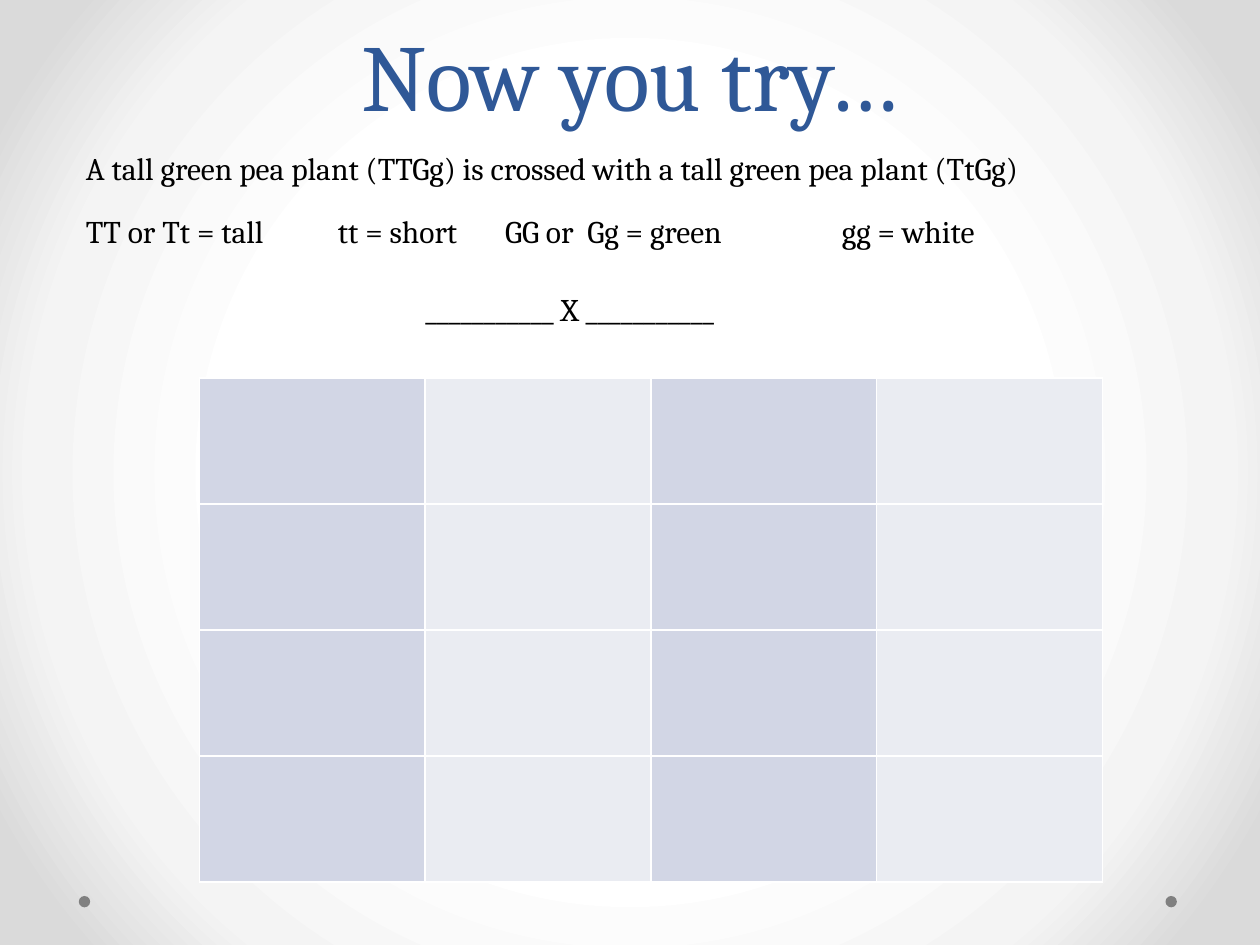
from lxml.etree import SubElement
from pptx import Presentation
from pptx.dml.color import RGBColor
from pptx.enum.shapes import MSO_SHAPE
from pptx.enum.text import MSO_ANCHOR, MSO_AUTO_SIZE, PP_ALIGN
from pptx.oxml import parse_xml
from pptx.oxml.ns import nsdecls, qn
from pptx.util import Pt

FONT = "Cambria"
BACKGROUND_STOPS = [(50, "FFFFFF"), (76, "F4F4F4"), (92, "DADADA")]
COLUMN_FILLS = ["D2D6E5", "EAECF2"]
GRID_SIZE = 4


def rgb(value):
    return RGBColor.from_string(value)


def box(left, top, width, height):
    return Pt(left), Pt(top), Pt(width), Pt(height)


def set_background(slide):
    """Fill the slide with a radial gradient centred on it."""
    stops = "".join(
        f'<a:gs pos="{pos * 1000}"><a:srgbClr val="{color}"/></a:gs>'
        for pos, color in BACKGROUND_STOPS
    )
    bg = parse_xml(
        f'<p:bg {nsdecls("p", "a")}><p:bgPr><a:gradFill rotWithShape="1">'
        f'<a:gsLst>{stops}</a:gsLst><a:path path="circle">'
        '<a:fillToRect l="50000" t="50000" r="50000" b="50000"/></a:path>'
        "</a:gradFill><a:effectLst/></p:bgPr></p:bg>"
    )
    slide.element.cSld.insert(0, bg)


def format_paragraph(p, size, color):
    p.font.name = FONT
    p.font.size = Pt(size)
    p.font.color.rgb = rgb(color)


def add_dot(slide, left):
    sp = slide.shapes.add_shape(MSO_SHAPE.OVAL, *box(left, 512, 6.5, 6.5))
    sp.shadow.inherit = False
    sp.fill.solid()
    sp.fill.fore_color.rgb = rgb("808080")
    sp.line.fill.background()


def set_title(slide, text):
    title = slide.shapes.title
    title.left, title.top, title.width, title.height = box(36, 0, 648, 78)
    tf = title.text_frame
    tf.text = text
    tf.auto_size = MSO_AUTO_SIZE.NONE
    tf.vertical_anchor = MSO_ANCHOR.BOTTOM
    p = tf.paragraphs[0]
    p.alignment = PP_ALIGN.CENTER
    p.line_spacing = Pt(58)
    format_paragraph(p, 54, "2F5897")


def add_text(slide, text, left, top, width, wrap=True, tabs=()):
    tf = slide.shapes.add_textbox(*box(left, top, width, 29)).text_frame
    tf.word_wrap = wrap
    tf.auto_size = MSO_AUTO_SIZE.SHAPE_TO_FIT_TEXT
    p = tf.paragraphs[0]
    p.add_run().text = text
    format_paragraph(p, 18, "000000")
    if tabs:
        tab_list = parse_xml(f'<a:tabLst {nsdecls("a")}/>')
        for tab in tabs:
            SubElement(tab_list, qn("a:tab"), pos=str(Pt(tab)), algn="l")
        p._p.get_or_add_pPr().insert(0, tab_list)


def add_cell_borders(cell):
    tc_pr = cell._tc.get_or_add_tcPr()
    for index, side in enumerate(("lnL", "lnR", "lnT", "lnB")):
        tc_pr.insert(index, parse_xml(
            f'<a:{side} {nsdecls("a")} w="{Pt(1)}"><a:solidFill>'
            f'<a:srgbClr val="FFFFFF"/></a:solidFill></a:{side}>'
        ))


def add_punnett_square(slide):
    frame = slide.shapes.add_table(
        GRID_SIZE, GRID_SIZE, *box(114, 216, 516, 288))
    table = frame.table
    table.first_row = False
    table.horz_banding = False
    for row in table.rows:
        for column, cell in enumerate(row.cells):
            cell.fill.solid()
            cell.fill.fore_color.rgb = rgb(COLUMN_FILLS[column % 2])
            add_cell_borders(cell)


def main():
    prs = Presentation()
    prs.slide_width, prs.slide_height = Pt(720), Pt(540)
    slide = prs.slides.add_slide(prs.slide_layouts[5])
    set_background(slide)
    for left in (666, 45):
        add_dot(slide, left)
    set_title(slide, "Now you try…")
    add_text(
        slide,
        "A tall green pea plant (TTGg) is crossed with a tall green pea plant (TtGg)",
        42, 81.5, 624)
    add_punnett_square(slide)
    add_text(slide, "___________ X ___________", 236, 162, 235.5, wrap=False)
    add_text(
        slide,
        "TT or Tt = tall\ttt = short\tGG or  Gg = green\tgg = white",
        42, 117.5, 600, tabs=(144, 239.5, 432))
    prs.save("out.pptx")


if __name__ == "__main__":
    main()
